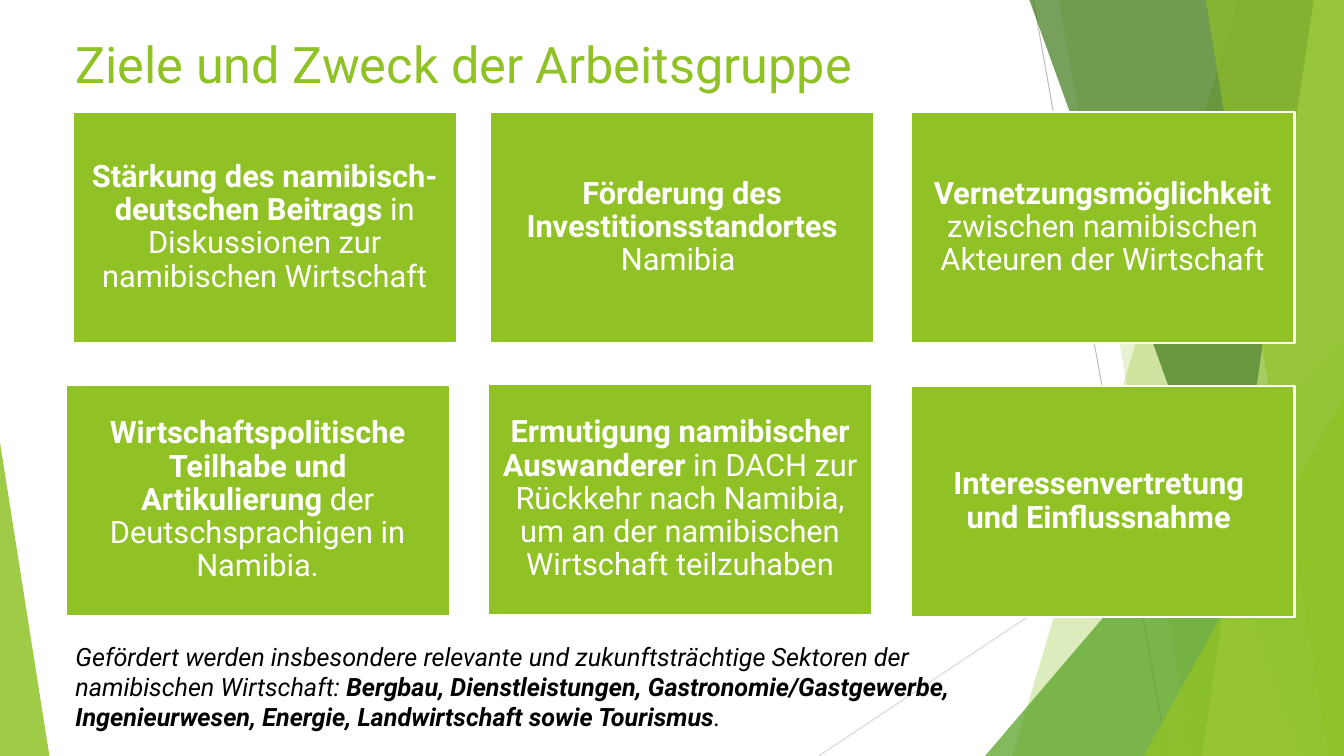
from lxml.etree import SubElement
from pptx import Presentation
from pptx.dml.color import RGBColor
from pptx.enum.shapes import MSO_CONNECTOR, MSO_SHAPE
from pptx.enum.text import MSO_ANCHOR, PP_ALIGN
from pptx.oxml.ns import qn
from pptx.util import Inches, Pt

W, H = 13.33, 7.5
FONT = "Roboto"
COLORS = {
    "green": "90C226", "leaf": "54A021", "forest": "3F7819", "lime": "C0E474",
    "gray": "BFBFBF", "silver": "D9D9D9", "white": "FFFFFF", "black": "000000",
}
CARD_W, CARD_H = 3.81, 2.29
# left, top, bold text, regular text
CARDS = [
    (0.65, 3.82, "Wirtschaftspolitische Teilhabe und Artikulierung ",
     "der Deutschsprachigen in Namibia."),
    (0.72, 1.11, "Stärkung des namibisch-deutschen Beitrags ",
     "in Diskussionen zur namibischen Wirtschaft"),
    (9.03, 3.83, "Interessenvertretung \nund Einflussnahme ", ""),
    (4.86, 1.11, "Förderung des Investitionsstandortes ", "Namibia "),
    (4.84, 3.81, "Ermutigung namibischer Auswanderer ",
     "in DACH zur Rückkehr nach Namibia, um an der namibischen Wirtschaft teilzuhaben"),
    (9.03, 1.11, "Vernetzungsmöglichkeit ",
     "zwischen namibischen Akteuren der Wirtschaft"),
]


def rgb(name):
    return RGBColor.from_string(COLORS[name])


def box(left, top, width, height):
    return [Inches(v) for v in (left, top, width, height)]


def paint(sp, color, opacity=100):
    """Fill a shape, with opacity in percent, and drop its outline and shadow."""
    sp.shadow.inherit = False
    sp.line.fill.background()
    sp.fill.solid()
    sp.fill.fore_color.rgb = rgb(color)
    if opacity < 100:
        clr = sp._element.spPr.find(qn("a:solidFill"))[0]
        SubElement(clr, qn("a:alpha"), val=str(opacity * 1000))


def add_run(p, text, size, color, bold=False, italic=False):
    for i, line in enumerate(text.split("\n")):
        if i:
            p.add_line_break()
        r = p.add_run()
        r.text = line
        r.font.name = FONT
        r.font.size = Pt(size)
        r.font.bold = bold
        r.font.italic = italic
        r.font.color.rgb = rgb(color)


def add_thin_line(s, start, end, color):
    line = s.shapes.add_connector(
        MSO_CONNECTOR.STRAIGHT, *[Inches(v) for v in start + end])
    line.line.color.rgb = rgb(color)
    line.line.width = Pt(0.75)
    SubElement(line._element.spPr, qn("a:effectLst"))


def add_facet(s, top_x, bottom_x, color, opacity):
    """Full-height facet from a slanted left edge to the right slide edge."""
    corners = [(top_x, 0), (W, 0), (W, H), (bottom_x, H)]
    points = [(Inches(x), Inches(y)) for x, y in corners]
    builder = s.shapes.build_freeform(*points[0])
    builder.add_line_segments(points[1:])
    paint(builder.convert_to_shape(), color, opacity)


def add_corner(s, left, top, width, apex, color, opacity):
    """Right-angled triangle standing on the bottom slide edge."""
    sp = s.shapes.add_shape(
        MSO_SHAPE.ISOSCELES_TRIANGLE, *box(left, top, width, H - top))
    sp.adjustments[0] = apex
    paint(sp, color, opacity)


def add_backdrop(s):
    add_thin_line(s, (10.25, 0), (11.58, H), "gray")
    add_thin_line(s, (W, 4.03), (8.12, H), "silver")
    add_facet(s, 12.28, 10.04, "green", 30)
    add_facet(s, 10.5, 11.83, "green", 20)
    add_corner(s, 9.77, 3.33, 3.56, 1, "leaf", 72)
    add_facet(s, 10.21, 12.91, "forest", 70)
    add_facet(s, 13.03, 11.92, "lime", 70)
    add_facet(s, 11.96, 13.18, "green", 65)
    add_corner(s, 11.34, 3.93, 1.99, 1, "green", 80)
    add_corner(s, 0, 4.39, 0.49, 0, "green", 85)


def add_text(s, left, top, width, height):
    tf = s.shapes.add_textbox(*box(left, top, width, height)).text_frame
    tf.word_wrap = True
    return tf.paragraphs[0]


def add_card(s, left, top, strong, plain):
    sp = s.shapes.add_shape(MSO_SHAPE.RECTANGLE, *box(left, top, CARD_W, CARD_H))
    paint(sp, "green")
    sp.line.color.rgb = rgb("white")
    sp.line.width = Pt(1.5)
    tf = sp.text_frame
    tf.word_wrap = True
    tf.vertical_anchor = MSO_ANCHOR.MIDDLE
    tf.margin_left = tf.margin_right = Inches(0.09)
    tf.margin_top = tf.margin_bottom = Inches(0.09)
    p = tf.paragraphs[0]
    p.alignment = PP_ALIGN.CENTER
    p.line_spacing = 0.9
    add_run(p, strong, 22, "white", bold=True)
    if plain:
        add_run(p, plain, 22, "white")


def add_sectors(s, left, top, width, height):
    p = add_text(s, left, top, width, height)
    add_run(p, "Gefördert werden insbesondere relevante und zukunftsträchtige "
               "Sektoren der namibischen Wirtschaft: ", 18, "black", italic=True)
    add_run(p, "Bergbau, Dienstleistungen, Gastronomie/Gastgewerbe, Ingenieurwesen, "
               "Energie, Landwirtschaft sowie Tourismus",
            18, "black", bold=True, italic=True)
    add_run(p, ".", 18, "black", italic=True)


def main():
    prs = Presentation()
    prs.slide_width, prs.slide_height = Inches(W), Inches(H)
    s = prs.slides.add_slide(prs.slide_layouts[6])
    add_backdrop(s)
    title = add_text(s, 0.65, 0.28, 9.57, 1.65)
    add_run(title, "Ziele und Zweck der Arbeitsgruppe", 36, "green")
    for card in CARDS:
        add_card(s, *card)
    add_sectors(s, 0.65, 6.31, 9.57, 1.01)
    prs.save("out.pptx")


if __name__ == "__main__":
    main()
